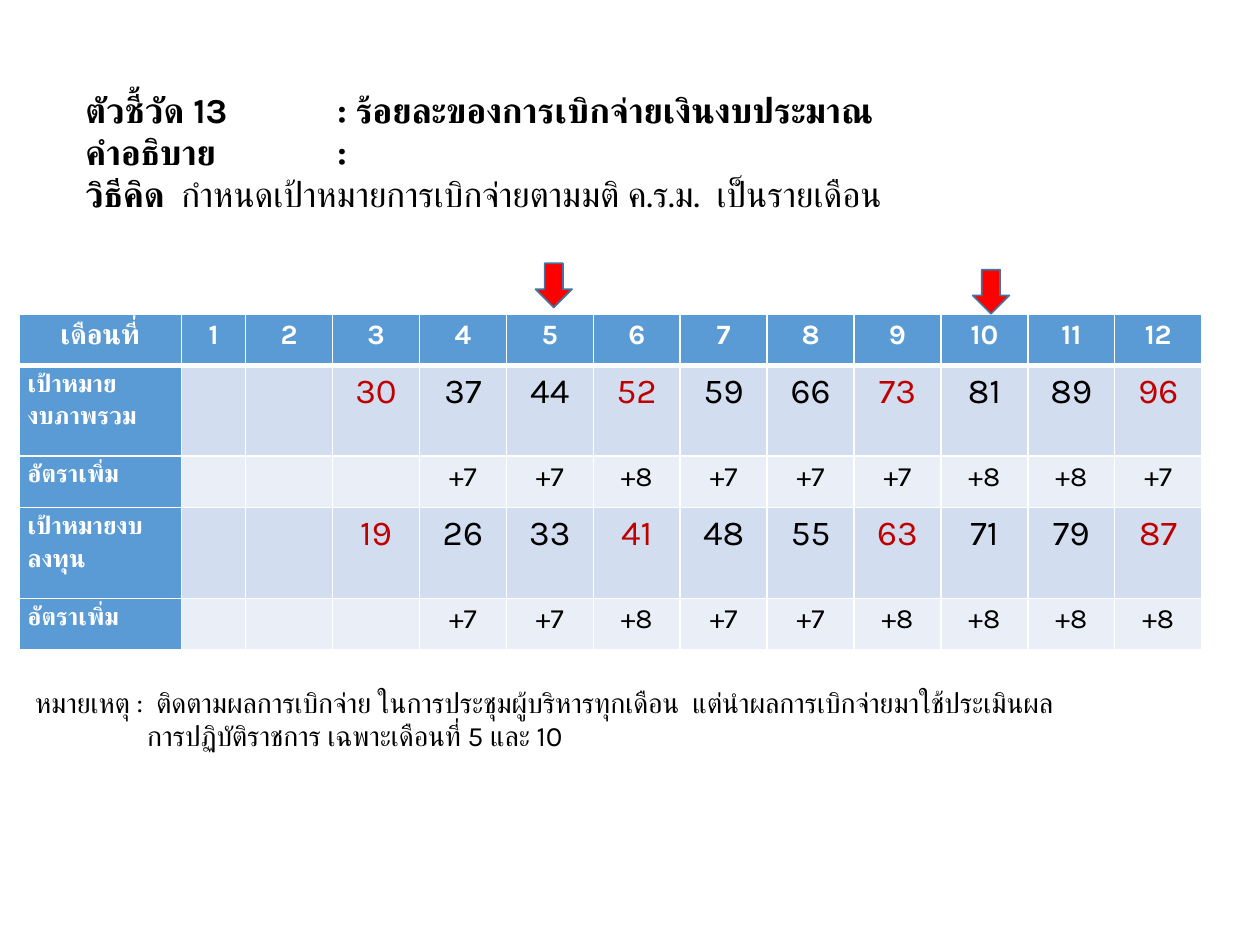
import pptx
import pptx.dml.color
import pptx.enum.shapes
import pptx.enum.text
import pptx.oxml
import pptx.oxml.ns
import pptx.util
from dataclasses import dataclass
from lxml import etree

Inches = pptx.util.Inches
Pt = pptx.util.Pt
ALIGN = pptx.enum.text.PP_ALIGN
qn = pptx.oxml.ns.qn


@dataclass(frozen=True)
class Theme:
    font: str = "Karla"
    header: str = "5B9BD5"
    bands: tuple = ("D2DEEF", "EAEFF7")
    white: str = "FFFFFF"
    black: str = "000000"
    milestone: str = "C00000"
    arrow: str = "FF0000"
    arrow_line: str = "43739E"
    large: int = 20
    medium: int = 16
    small: int = 14


THEME = Theme()
MONTHS = 12
QUARTER = 3
COL_WIDTHS = [1.29, 0.51] + [0.69] * 11
ROW_HEIGHTS = [0.41, 0.72, 0.41, 0.72, 0.41]
TARGET_ROWS = [
    ("เป้าหมาย\nงบภาพรวม", [30, 37, 44, 52, 59, 66, 73, 81, 89, 96]),
    ("เป้าหมายงบลงทุน", [19, 26, 33, 41, 48, 55, 63, 71, 79, 87]),
]


def rgb(color):
    return pptx.dml.color.RGBColor.from_string(color)


def style_run(r, size, color=THEME.black, bold=False):
    r.font.name = THEME.font
    r.font.size = Pt(size)
    r.font.bold = bold
    r.font.color.rgb = rgb(color)
    etree.SubElement(r.font._element, qn("a:cs"), typeface=THEME.font)


def add_text_frame(slide, box):
    tf = slide.shapes.add_textbox(*map(Inches, box)).text_frame
    tf.word_wrap = True
    return tf


def add_heading(slide, box):
    tf = add_text_frame(slide, box)
    lines = [
        [("ตัวชี้วัด 13\t: ร้อยละของการเบิกจ่ายเงินงบประมาณ", True)],
        [("คำอธิบาย\t:", True)],
        [("วิธีคิด", True),
         ("  กำหนดเป้าหมายการเบิกจ่ายตามมติ ค.ร.ม.  เป็นรายเดือน", False)],
    ]
    for i, parts in enumerate(lines):
        p = tf.paragraphs[0] if i == 0 else tf.add_paragraph()
        tabs = etree.SubElement(p._p.get_or_add_pPr(), qn("a:tabLst"))
        etree.SubElement(tabs, qn("a:tab"), pos=str(Inches(2)), algn="l")
        for text, bold in parts:
            r = p.add_run()
            r.text = text
            style_run(r, THEME.large, bold=bold)


def add_note(slide, box):
    tf = add_text_frame(slide, box)
    tf.text = (
        "หมายเหตุ :  ติดตามผลการเบิกจ่าย ในการประชุมผู้บริหารทุกเดือน  แต่นำผลการเบิกจ่ายมาใช้ประเมินผล\n"
        "การปฏิบัติราชการ เฉพาะเดือนที่ 5 และ 10"
    )
    tf.paragraphs[1]._p.get_or_add_pPr().set("marL", str(Inches(0.89)))
    for p in tf.paragraphs:
        style_run(p.runs[0], THEME.medium)


def set_borders(cell, widths):
    tc_pr = cell._tc.get_or_add_tcPr()
    for side in "LRTB":
        ln = etree.SubElement(tc_pr, qn(f"a:ln{side}"), w=str(Pt(widths.get(side, 1))))
        fill = etree.SubElement(ln, qn("a:solidFill"))
        etree.SubElement(fill, qn("a:srgbClr"), val=THEME.white)


def fill_cell(cell, text, fill, size, color, bold, align, borders):
    cell.margin_left = cell.margin_right = Inches(0.07)
    cell.margin_top = cell.margin_bottom = 0
    set_borders(cell, borders)
    cell.fill.solid()
    cell.fill.fore_color.rgb = rgb(fill)
    cell.text_frame.text = text
    for p in cell.text_frame.paragraphs:
        p.alignment = align
        p.line_spacing = 1.15
        for r in p.runs:
            style_run(r, size, color, bold)


def table_rows():
    rows = [["เดือนที่"] + [str(m) for m in range(1, MONTHS + 1)]]
    for label, targets in TARGET_ROWS:
        gains = [f"+{b - a}" for a, b in zip(targets, targets[1:])]
        rows.append([label, "", ""] + [str(t) for t in targets])
        rows.append(["อัตราเพิ่ม", "", "", ""] + gains)
    return rows


def add_target_table(slide, box):
    rows = table_rows()
    table = slide.shapes.add_table(len(rows), MONTHS + 1, *map(Inches, box)).table
    for col, width in zip(table.columns, COL_WIDTHS):
        col.width = Inches(width)
    for row, height in zip(table.rows, ROW_HEIGHTS):
        row.height = Inches(height)
    for i, values in enumerate(rows):
        is_target = i % 2 == 1
        borders = {0: {"B": 3}, 1: {"T": 3}}.get(i, {})
        for month, text in enumerate(values):
            is_heading = i == 0 or month == 0
            fill = THEME.header if is_heading else THEME.bands[(i - 1) % 2]
            size = THEME.large if is_target else THEME.medium
            color = THEME.black
            if is_heading:
                size = THEME.medium if i == 0 else THEME.small
                color = THEME.white
            elif is_target and month % QUARTER == 0:
                color = THEME.milestone
            align = ALIGN.LEFT if i and month == 0 else ALIGN.CENTER
            fill_cell(table.cell(i, month), text, fill, size, color,
                      is_heading, align, borders)


def add_month_arrow(slide, box):
    sp = slide.shapes.add_shape(
        pptx.enum.shapes.MSO_SHAPE.DOWN_ARROW, *map(Inches, box))
    sp.shadow.inherit = False
    sp.fill.solid()
    sp.fill.fore_color.rgb = rgb(THEME.arrow)
    sp.line.color.rgb = rgb(THEME.arrow_line)
    sp.line.width = Pt(1)


def main():
    prs = pptx.Presentation()
    prs.slide_width = Inches(10)
    prs.slide_height = Inches(7.5)
    slide = prs.slides.add_slide(prs.slide_layouts[6])
    add_target_table(slide, (0.15, 2.49, 9.35, 2.66))
    add_heading(slide, (0.58, 0.65, 8.65, 1.45))
    add_note(slide, (0.18, 5.39, 9.58, 0.64))
    for left, top in ((4.25, 2.09), (7.72, 2.14)):
        add_month_arrow(slide, (left, top, 0.29, 0.35))
    prs.save("out.pptx")


if __name__ == "__main__":
    main()
